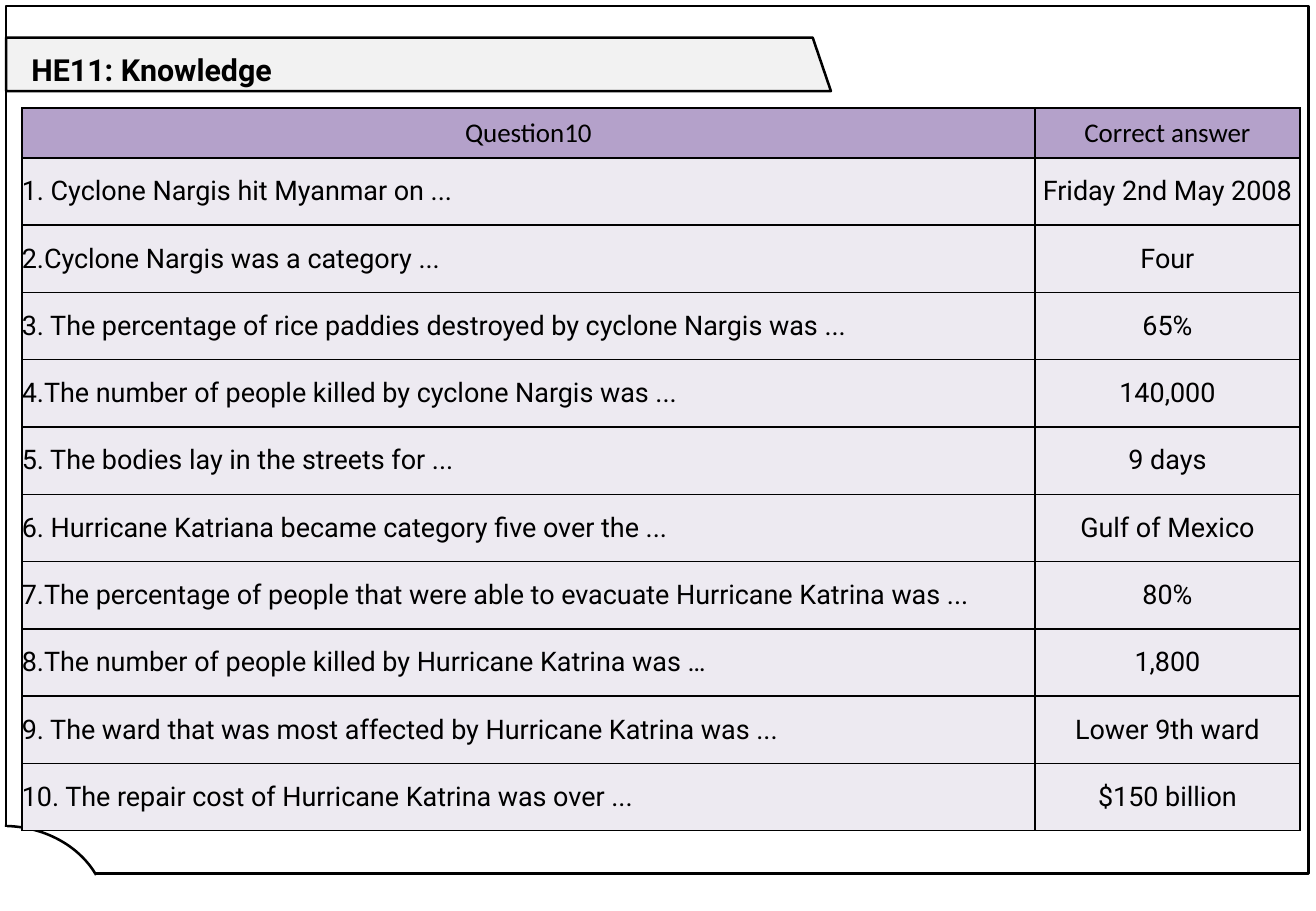
from lxml import etree
from pptx import Presentation
from pptx.dml.color import RGBColor
from pptx.enum import shapes, text
from pptx.oxml import ns
from pptx.util import Pt

HEADING = "HE11: Knowledge"
COLUMNS = ("Question10", "Correct answer")
QUIZ = [
    ("1. Cyclone Nargis hit Myanmar on ...", "Friday 2nd May 2008"),
    ("2.Cyclone Nargis was a category ...", "Four"),
    ("3. The percentage of rice paddies destroyed by cyclone Nargis was ...", "65%"),
    ("4.The number of people killed by cyclone Nargis was ...", "140,000"),
    ("5. The bodies lay in the streets for ...", "9 days"),
    ("6. Hurricane Katriana became category five over the ...", "Gulf of Mexico"),
    ("7.The percentage of people that were able to evacuate Hurricane Katrina was ...", "80%"),
    ("8.The number of people killed by Hurricane Katrina was …", "1,800"),
    ("9. The ward that was most affected by Hurricane Katrina was ...", "Lower 9th ward"),
    ("10. The repair cost of Hurricane Katrina was over ...", "$150 billion"),
]

BLACK = RGBColor(0x00, 0x00, 0x00)
WHITE = RGBColor(0xFF, 0xFF, 0xFF)
TAB_GREY = RGBColor(0xF2, 0xF2, 0xF2)
HEADER_PURPLE = RGBColor(0xB4, 0xA1, 0xCA)
ROW_LILAC = RGBColor(0xED, 0xEA, 0xF1)

HEADING_FONT = {"name": "Roboto", "size": Pt(18), "bold": True}
HEADER_FONT = {"name": "Calibri", "size": Pt(16), "bold": False}
ROW_FONT = {"name": "Roboto", "size": Pt(16), "bold": False}
CELL_FORMAT = {
    "margin_left": 0, "margin_right": 0, "margin_top": 0, "margin_bottom": 0,
    "vertical_anchor": text.MSO_ANCHOR.MIDDLE,
}

FRAME = (3.6, 3.6, 771.84, 514.08)
CORNER_ARC = (-59.04, 489.6, 122.4, 104.4)
ARC_ANGLES = (162.525, 202.265)
CORNER_PATCH = (0.72, 490.3, 3.6, 7.2)
TAB_OUTLINE = [(3.6, 22.3), (481.7, 22.3), (492.5, 54), (3.6, 54)]
HEADING_BOX = (11.5, 26.6, 216, 28.8)
TABLE_LEFT, TABLE_TOP = 12.96, 64.08
COLUMN_WIDTHS = (600.5, 157)
HEADER_HEIGHT, ROW_HEIGHT = 29.5, 39.9


def points(values):
    return [Pt(value) for value in values]


def apply(target, values):
    for name, value in values.items():
        setattr(target, name, value)


def paint(part, fill=None, outlined=True):
    part.shadow.inherit = False
    if fill is None:
        part.fill.background()
    else:
        part.fill.solid()
        part.fill.fore_color.rgb = fill
    if outlined:
        part.line.color.rgb = BLACK
        part.line.width = Pt(1.5)
    else:
        part.line.fill.background()


def write(paragraph, words, font):
    paragraph.text = words
    apply(paragraph.font, font)
    paragraph.font.color.rgb = BLACK


def add_borders(cell):
    properties = cell._tc.get_or_add_tcPr()
    for position, side in enumerate(("lnL", "lnR", "lnT", "lnB")):
        border = etree.Element(ns.qn("a:" + side), w=str(Pt(1)))
        solid = etree.SubElement(border, ns.qn("a:solidFill"))
        etree.SubElement(solid, ns.qn("a:srgbClr"), val=str(BLACK))
        properties.insert(position, border)


def add_backdrop(slide):
    builder = slide.shapes.build_freeform(*points(TAB_OUTLINE[0]))
    builder.add_line_segments([points(corner) for corner in TAB_OUTLINE[1:]], close=True)
    paint(builder.convert_to_shape(), TAB_GREY)
    add_shape = slide.shapes.add_shape
    paint(add_shape(shapes.MSO_SHAPE.RECTANGLE, *points(FRAME)))
    arc = add_shape(shapes.MSO_SHAPE.ARC, *points(CORNER_ARC))
    for index, angle in enumerate(ARC_ANGLES):
        arc.adjustments[index] = angle
    paint(arc, WHITE)
    paint(add_shape(shapes.MSO_SHAPE.RECTANGLE, *points(CORNER_PATCH)), WHITE, outlined=False)


def add_quiz(slide):
    height = HEADER_HEIGHT + ROW_HEIGHT * len(QUIZ)
    area = points((TABLE_LEFT, TABLE_TOP, sum(COLUMN_WIDTHS), height))
    quiz = slide.shapes.add_table(len(QUIZ) + 1, len(COLUMNS), *area).table
    for column, width in zip(quiz.columns, COLUMN_WIDTHS):
        column.width = Pt(width)
    for row_index, entries in enumerate([COLUMNS, *QUIZ]):
        is_header = row_index == 0
        quiz.rows[row_index].height = Pt(HEADER_HEIGHT if is_header else ROW_HEIGHT)
        for column_index, words in enumerate(entries):
            cell = quiz.cell(row_index, column_index)
            apply(cell, CELL_FORMAT)
            cell.fill.solid()
            cell.fill.fore_color.rgb = HEADER_PURPLE if is_header else ROW_LILAC
            add_borders(cell)
            paragraph = cell.text_frame.paragraphs[0]
            write(paragraph, words, HEADER_FONT if is_header else ROW_FONT)
            centred = is_header or column_index == 1
            paragraph.alignment = text.PP_ALIGN.CENTER if centred else text.PP_ALIGN.LEFT


def main():
    deck = Presentation()
    deck.slide_width, deck.slide_height = points((780, 540))
    slide = deck.slides.add_slide(deck.slide_layouts[6])
    add_backdrop(slide)
    add_quiz(slide)
    heading = slide.shapes.add_textbox(*points(HEADING_BOX)).text_frame
    heading.word_wrap = True
    write(heading.paragraphs[0], HEADING, HEADING_FONT)
    deck.save("out.pptx")


if __name__ == "__main__":
    main()
